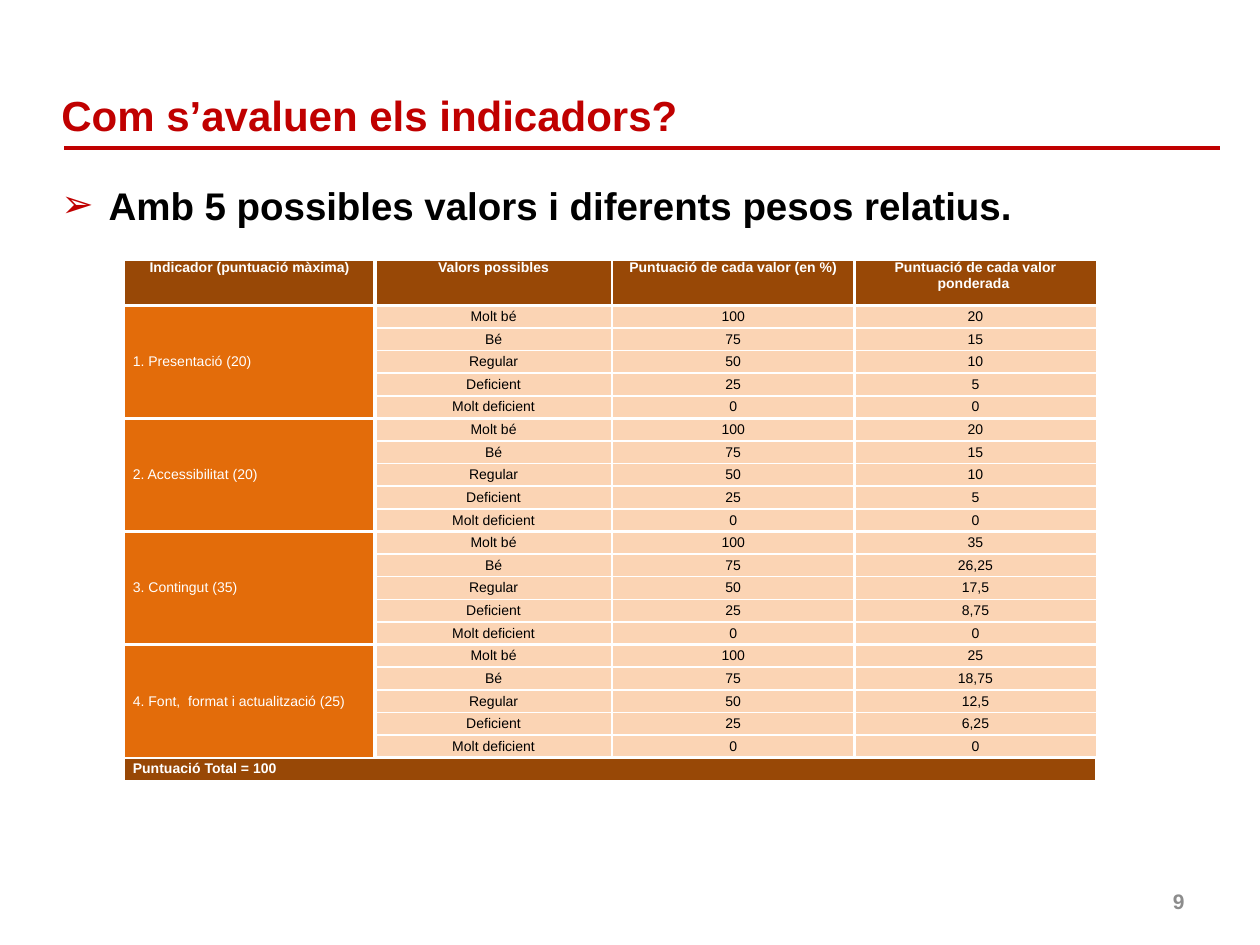
from lxml import etree
from pptx import Presentation
from pptx.dml.color import RGBColor
from pptx.enum.shapes import MSO_CONNECTOR
from pptx.enum.text import MSO_ANCHOR, PP_ALIGN
from pptx.oxml.ns import qn
from pptx.util import Pt

CENTER, RIGHT, JUSTIFY = PP_ALIGN.CENTER, PP_ALIGN.RIGHT, PP_ALIGN.JUSTIFY
TOP, MIDDLE = MSO_ANCHOR.TOP, MSO_ANCHOR.MIDDLE
STRAIGHT = MSO_CONNECTOR.STRAIGHT

FONT = "Arial"
COLORS = {
    "accent": "C00000", "text": "000000", "white": "FFFFFF", "number": "8C8C8C",
    "header": "984806", "indicator": "E36C0A", "value": "FBD4B4",
}
HEADERS = [
    "Indicador (puntuació màxima)", "Valors possibles",
    "Puntuació de cada valor (en %)", "Puntuació de cada valor ponderada ",
]
INDICATORS = [
    ("1. Presentació", 20), ("2. Accessibilitat", 20),
    ("3. Contingut", 35), ("4. Font,  format i actualització", 25),
]
GRADES = [("Molt bé", 100), ("Bé", 75), ("Regular", 50), ("Deficient", 25), ("Molt deficient", 0)]
COLUMN_WIDTHS = [143.5, 135.4, 138.5, 138.4]
VERTICAL_RULES = [1, 2.25, 1.5, 1.5, 1]


def color(name):
    return RGBColor.from_string(COLORS[name])


def set_font(paragraph, size, color_name, bold=True):
    paragraph.font.name = FONT
    paragraph.font.size = Pt(size)
    paragraph.font.bold = bold
    paragraph.font.color.rgb = color(color_name)


def add_text(slide, box, text, anchor=TOP):
    """Add a wrapping text box and return its only paragraph."""
    frame = slide.shapes.add_textbox(*map(Pt, box)).text_frame
    frame.word_wrap = True
    frame.vertical_anchor = anchor
    frame.text = text
    return frame.paragraphs[0]


def add_heading(slide, left, top, width, height):
    title = add_text(slide, (left, top, width, height), "Com s’avaluen els indicadors?", MIDDLE)
    set_font(title, 24, "accent")
    rule_y = Pt(top + 38.9)
    rule = slide.shapes.add_connector(STRAIGHT, Pt(left + 8.6), rule_y, Pt(left + width - 5.8), rule_y)
    rule.line.color.rgb = color("accent")
    rule.line.width = Pt(2.25)
    etree.SubElement(rule._element.spPr, qn("a:effectLst"))


def add_bullet(slide, left, top, width, height):
    statement = add_text(slide, (left, top, width, height),
                         "Amb 5 possibles valors i diferents pesos relatius.")
    properties = statement._p.get_or_add_pPr()
    properties.set("marL", str(Pt(27)))
    properties.set("indent", str(Pt(-27)))
    bullet_color = etree.SubElement(properties, qn("a:buClr"))
    etree.SubElement(bullet_color, qn("a:srgbClr"), val=COLORS["accent"])
    etree.SubElement(properties, qn("a:buFont"), typeface=FONT)
    etree.SubElement(properties, qn("a:buChar"), char="➢")
    set_font(statement, 22, "text")


def horizontal_rule(edge, column):
    """Width of the rule above row number edge, in the given column."""
    last = len(INDICATORS) * len(GRADES) + 1
    if edge == 1:
        return 2.25
    if 1 < edge <= last and edge % len(GRADES) == 1:
        return 1.5 if column == 0 else 2.25
    return 1


def set_borders(cell, row, column):
    widths = {
        "L": VERTICAL_RULES[column], "R": VERTICAL_RULES[column + 1],
        "T": horizontal_rule(row, column), "B": horizontal_rule(row + 1, column),
    }
    properties = cell._tc.get_or_add_tcPr()
    for side, width in widths.items():
        border = etree.SubElement(properties, qn(f"a:ln{side}"), w=str(Pt(width)))
        fill = etree.SubElement(border, qn("a:solidFill"))
        etree.SubElement(fill, qn("a:srgbClr"), val=COLORS["white"])


def fill_cell(cell, text, fill, align=CENTER, bold=False, anchor=MIDDLE):
    cell.margin_left = cell.margin_right = Pt(5)
    cell.margin_top = cell.margin_bottom = 0
    cell.vertical_anchor = anchor
    cell.fill.solid()
    cell.fill.fore_color.rgb = color(fill)
    cell.text = text
    paragraph = cell.text_frame.paragraphs[0]
    paragraph.alignment = align
    set_font(paragraph, 8, "text" if fill == "value" else "white", bold)


def add_score_table(slide, left, top, width, height):
    total_row = len(INDICATORS) * len(GRADES) + 1
    table = slide.shapes.add_table(total_row + 1, len(HEADERS), *map(Pt, (left, top, width, height))).table
    row_height = height / (total_row + 2)  # the header is two rows high
    for row in table.rows:
        row.height = Pt(row_height)
    table.rows[0].height = Pt(2 * row_height)
    for column, column_width in zip(table.columns, COLUMN_WIDTHS):
        column.width = Pt(column_width)
    for row in range(total_row + 1):
        for column in range(len(HEADERS)):
            set_borders(table.cell(row, column), row, column)

    for column, header in enumerate(HEADERS):
        fill_cell(table.cell(0, column), header, "header", bold=True, anchor=TOP)
    for group, (indicator, maximum) in enumerate(INDICATORS):
        first = 1 + group * len(GRADES)
        table.cell(first, 0).merge(table.cell(first + len(GRADES) - 1, 0))
        fill_cell(table.cell(first, 0), f"{indicator} ({maximum})", "indicator", JUSTIFY)
        for row, (grade, percent) in enumerate(GRADES, first):
            weighted = f"{maximum * percent / 100:g}".replace(".", ",")
            for column, value in enumerate((grade, str(percent), weighted), 1):
                fill_cell(table.cell(row, column), value, "value")
    table.cell(total_row, 0).merge(table.cell(total_row, len(HEADERS) - 1))
    total = sum(maximum for _, maximum in INDICATORS)
    fill_cell(table.cell(total_row, 0), f"Puntuació Total = {total}", "header", JUSTIFY, bold=True)


def add_page_number(slide, left, top, width, height):
    number = add_text(slide, (left, top, width, height), "9", MIDDLE)
    number.alignment = RIGHT
    set_font(number, 12, "number")


def main():
    presentation = Presentation()
    presentation.slide_width, presentation.slide_height = Pt(720), Pt(540)
    slide = presentation.slides.add_slide(presentation.slide_layouts[6])
    add_heading(slide, 28, 45.5, 675, 40.5)
    add_score_table(slide, 70.9, 148.6, sum(COLUMN_WIDTHS), 297.4)
    add_page_number(slide, 516, 500.5, 168, 28.8)
    add_bullet(slide, 28, 100.2, 675, 34)
    presentation.save("out.pptx")


if __name__ == "__main__":
    main()
